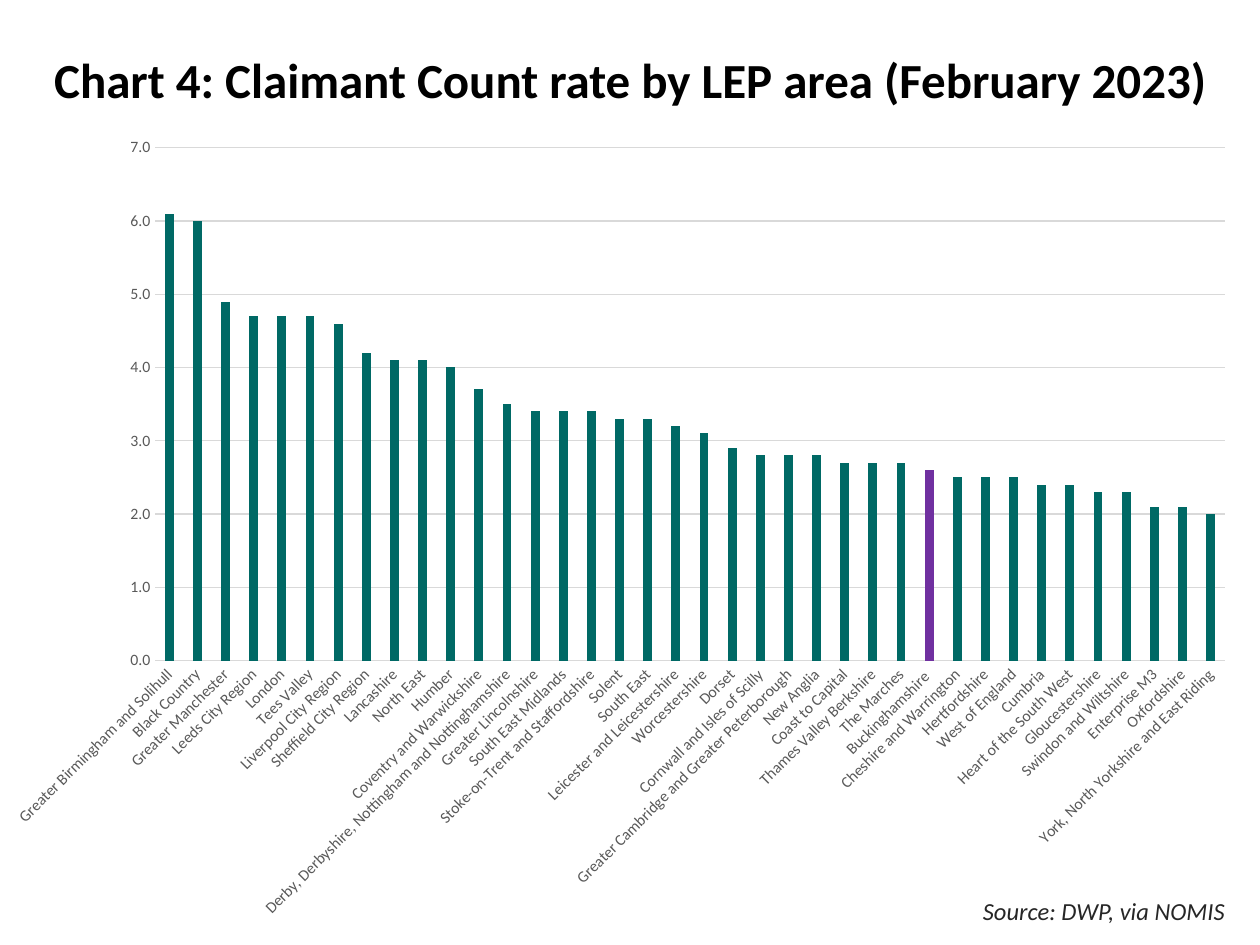
from pptx import Presentation
from pptx.chart.data import CategoryChartData
from pptx.dml.color import RGBColor
from pptx.enum.chart import XL_CHART_TYPE, XL_TICK_MARK
from pptx.enum.text import MSO_ANCHOR, PP_ALIGN
from pptx.oxml.ns import qn
from pptx.util import Inches, Pt

COLUMN_CHART = XL_CHART_TYPE.COLUMN_CLUSTERED
NO_TICK = XL_TICK_MARK.NONE
LEFT, RIGHT = PP_ALIGN.LEFT, PP_ALIGN.RIGHT
MIDDLE = MSO_ANCHOR.MIDDLE

BLACK = RGBColor(0x00, 0x00, 0x00)
WHITE = RGBColor(0xFF, 0xFF, 0xFF)
DARK_GREY = RGBColor(0x26, 0x26, 0x26)
LABEL_GREY = RGBColor(0x59, 0x59, 0x59)
GRID_GREY = RGBColor(0xD9, 0xD9, 0xD9)
TEAL = RGBColor(0x00, 0x69, 0x65)
PURPLE = RGBColor(0x70, 0x30, 0xA0)
FONT = "Calibri"

SLIDE_WIDTH, SLIDE_HEIGHT = 10, 7.5
TITLE_BOX = (0.33, 0.27, 9.36, 0.77)
SOURCE_BOX = (7.44, 7.06, 2.38, 0.34)
CHART_BOX = (-0.08, 0.97, SLIDE_WIDTH, 6.44)

HIGHLIGHT = "Buckinghamshire "
CLAIMANT_RATES = {
    "Greater Birmingham and Solihull": 6.1,
    "Black Country": 6.0,
    "Greater Manchester": 4.9,
    "Leeds City Region": 4.7,
    "London": 4.7,
    "Tees Valley": 4.7,
    "Liverpool City Region": 4.6,
    "Sheffield City Region": 4.2,
    "Lancashire": 4.1,
    "North East": 4.1,
    "Humber": 4.0,
    "Coventry and Warwickshire": 3.7,
    "Derby, Derbyshire, Nottingham and Nottinghamshire": 3.5,
    "Greater Lincolnshire": 3.4,
    "South East Midlands": 3.4,
    "Stoke-on-Trent and Staffordshire": 3.4,
    "Solent": 3.3,
    "South East": 3.3,
    "Leicester and Leicestershire": 3.2,
    "Worcestershire": 3.1,
    "Dorset": 2.9,
    "Cornwall and Isles of Scilly": 2.8,
    "Greater Cambridge and Greater Peterborough": 2.8,
    "New Anglia": 2.8,
    "Coast to Capital": 2.7,
    "Thames Valley Berkshire": 2.7,
    "The Marches": 2.7,
    HIGHLIGHT: 2.6,
    "Cheshire and Warrington": 2.5,
    "Hertfordshire": 2.5,
    "West of England": 2.5,
    "Cumbria": 2.4,
    "Heart of the South West": 2.4,
    "Gloucestershire": 2.3,
    "Swindon and Wiltshire": 2.3,
    "Enterprise M3": 2.1,
    "Oxfordshire": 2.1,
    "York, North Yorkshire and East Riding": 2.0,
}


def format_font(font, size, color, bold=False, italic=False):
    font.name = FONT
    font.size = Pt(size)
    font.color.rgb = color
    font.bold = bold
    font.italic = italic


def write_text(shape, text, align=LEFT, line_spacing=1.0, **font_format):
    shape.text_frame.word_wrap = True
    paragraph = shape.text_frame.paragraphs[0]
    paragraph.alignment = align
    paragraph.line_spacing = line_spacing
    run = paragraph.add_run()
    run.text = text
    format_font(run.font, **font_format)


def place_title(slide, box):
    title = slide.shapes.title
    title.left, title.top, title.width, title.height = map(Inches, box)
    title.fill.solid()
    title.fill.fore_color.rgb = WHITE
    title.text_frame.vertical_anchor = MIDDLE
    write_text(title, "Chart 4: Claimant Count rate by LEP area (February 2023)",
               line_spacing=0.9, size=28, color=BLACK, bold=True)


def place_source(slide, box):
    source = slide.shapes.add_textbox(*map(Inches, box))
    write_text(source, "Source: DWP, via NOMIS", align=RIGHT,
               size=14, color=DARK_GREY, italic=True)


def format_axes(chart):
    category_axis, value_axis = chart.category_axis, chart.value_axis
    for axis in (category_axis, value_axis):
        axis.major_tick_mark = axis.minor_tick_mark = NO_TICK
        format_font(axis.tick_labels.font, size=9, color=LABEL_GREY)
    category_axis._element.find(qn("c:txPr")).find(qn("a:bodyPr")).set("rot", "-2700000")

    value_axis.minimum_scale, value_axis.maximum_scale, value_axis.major_unit = 0, 7, 1
    value_axis.tick_labels.number_format = "#,##0.0"
    value_axis.tick_labels.number_format_is_linked = False
    value_axis.format.line.fill.background()
    for line in (category_axis.format.line, value_axis.major_gridlines.format.line):
        line.color.rgb = GRID_GREY
        line.width = Pt(0.75)


def place_chart(slide, box):
    data = CategoryChartData(number_format="0.0")
    data.categories = list(CLAIMANT_RATES)
    data.add_series("Series 1", list(CLAIMANT_RATES.values()))
    chart = slide.shapes.add_chart(COLUMN_CHART, *map(Inches, box), data).chart
    chart.has_title = False
    chart.has_legend = False
    format_font(chart.font, size=10, color=BLACK)

    plot = chart.plots[0]
    plot.gap_width, plot.overlap = 219, -27
    plot.vary_by_categories = False
    series = plot.series[0]
    highlighted = series.points[list(CLAIMANT_RATES).index(HIGHLIGHT)]
    for part, color in ((series, TEAL), (highlighted, PURPLE)):
        part.format.fill.solid()
        part.format.fill.fore_color.rgb = color

    format_axes(chart)


def main():
    presentation = Presentation()
    presentation.slide_width = Inches(SLIDE_WIDTH)
    presentation.slide_height = Inches(SLIDE_HEIGHT)
    slide = presentation.slides.add_slide(presentation.slide_layouts[5])
    place_title(slide, TITLE_BOX)
    place_source(slide, SOURCE_BOX)
    place_chart(slide, CHART_BOX)
    presentation.save("out.pptx")


if __name__ == "__main__":
    main()
